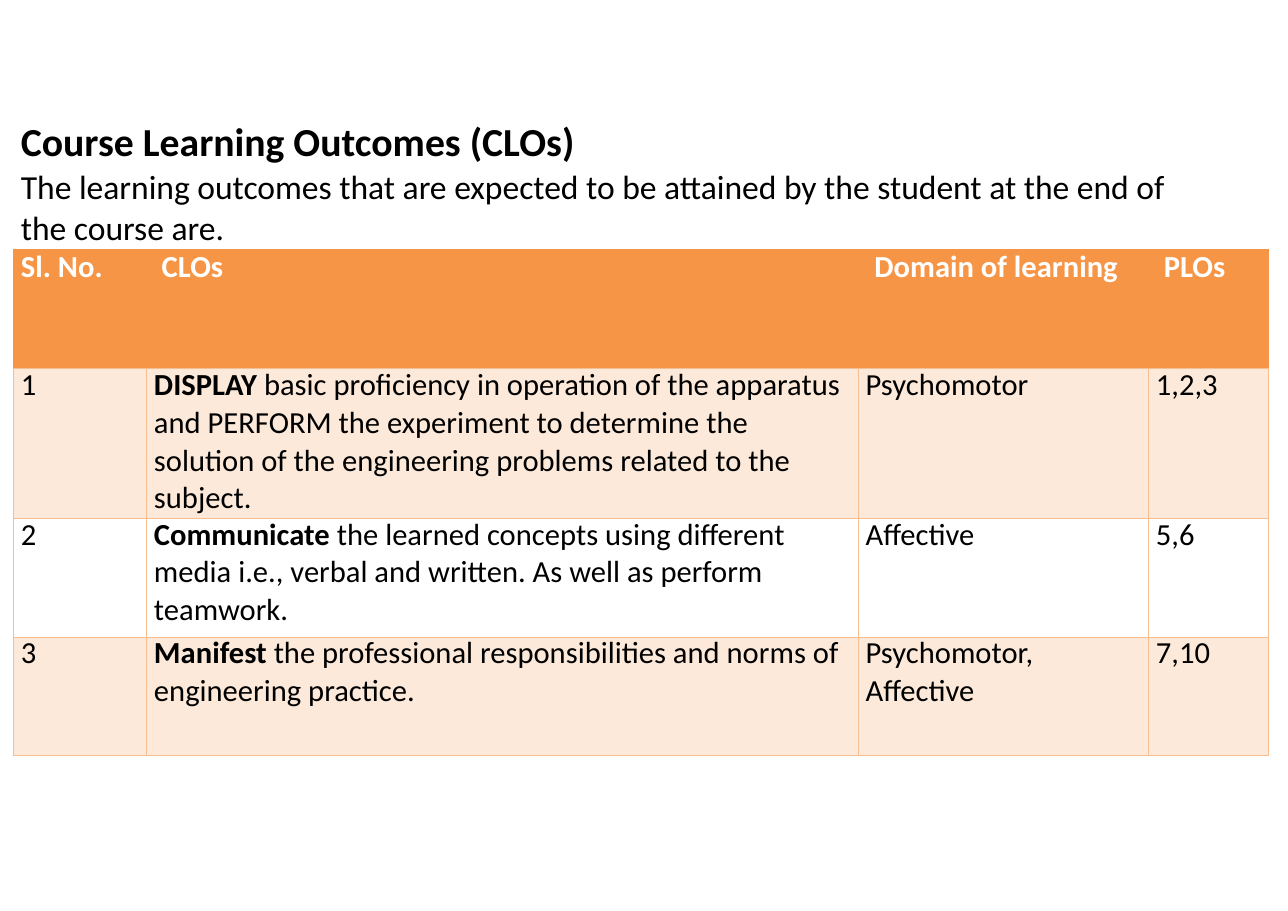
from dataclasses import dataclass

from lxml import etree
from pptx import Presentation
from pptx import util as u
from pptx.dml.color import RGBColor
from pptx.enum import text
from pptx.oxml import ns


@dataclass(frozen=True)
class Theme:
    """Colours, font and type sizes of the slide."""
    font: str = "Calibri"
    ink: str = "000000"
    white: str = "FFFFFF"
    header: str = "F79546"
    band: str = "FCE9D9"
    border: str = "F9BE8F"
    title_size: int = 26
    intro_size: int = 22
    table_size: int = 20


THEME = Theme()
INDENT = 0.07
COLUMN_WIDTHS = (1.21, 6.47, 2.64, 1.09)
ROW_HEIGHTS = (1.08, 1.36, 1.08, 1.08)
HEADER_TABS = (1.28, 7.76, 10.39)
HEADERS = ("Sl. No.", "CLOs", "Domain of learning", "PLOs")
OUTCOMES = (
    ("1", "DISPLAY ",
     ("basic proficiency in operation of the apparatus",
      "and PERFORM the experiment to determine the",
      "solution of the engineering problems related to the subject."),
     ("Psychomotor",), "1,2,3"),
    ("2", "Communicate ",
     ("the learned concepts using different",
      "media i.e., verbal and written. As well as perform teamwork."),
     ("Affective",), "5,6"),
    ("3", "Manifest ",
     ("the professional responsibilities and norms of",
      "engineering practice."),
     ("Psychomotor,", "Affective"), "7,10"),
)


def apply(target, values):
    """Set the attributes of an object from a dict."""
    for name, value in values.items():
        setattr(target, name, value)


def add_run(paragraph, wording, size, color=THEME.ink, bold=False):
    """Add a formatted run to a paragraph."""
    run = paragraph.add_run()
    run.text = wording
    apply(run.font, {"name": THEME.font, "size": u.Pt(size), "bold": bold})
    run.font.color.rgb = RGBColor.from_string(color)


def format_paragraph(paragraph, indent, before=0, line=None):
    """Set the indent and spacing of a paragraph."""
    apply(paragraph, {"alignment": text.PP_ALIGN.LEFT,
                      "space_before": u.Pt(before), "line_spacing": line})
    paragraph._p.get_or_add_pPr().set("marL", str(u.Inches(indent)))


def add_tabs(paragraph, positions):
    """Add left tab stops to a paragraph."""
    tabs = etree.SubElement(paragraph._p.get_or_add_pPr(), ns.qn("a:tabLst"))
    for position in positions:
        etree.SubElement(tabs, ns.qn("a:tab"), pos=str(u.Inches(position)), algn="l")


def style_cell(cell, fill, border):
    """Give a cell its borders, fill and zero margins."""
    properties = cell._tc.get_or_add_tcPr()
    for side in ("lnL", "lnR", "lnT", "lnB"):
        line = etree.SubElement(properties, ns.qn(f"a:{side}"), w=str(u.Pt(0.5)))
        solid = etree.SubElement(line, ns.qn("a:solidFill"))
        etree.SubElement(solid, ns.qn("a:srgbClr"), val=border)
    cell.fill.solid()
    cell.fill.fore_color.rgb = RGBColor.from_string(fill)
    apply(cell, {"margin_left": 0, "margin_right": 0, "margin_top": 0,
                 "margin_bottom": 0, "vertical_anchor": text.MSO_ANCHOR.TOP})


def fill_cell(cell, lines, lead=""):
    """Write paragraphs into a cell, the first with an optional bold lead."""
    for index, wording in enumerate(lines):
        frame = cell.text_frame
        paragraph = frame.add_paragraph() if index else frame.paragraphs[0]
        if index:
            format_paragraph(paragraph, INDENT, before=0.3)
        else:
            format_paragraph(paragraph, INDENT, line=u.Pt(23))
            if lead:
                add_run(paragraph, lead, THEME.table_size, bold=True)
        add_run(paragraph, wording, THEME.table_size)


def add_heading(slide):
    """Add the heading and its introduction."""
    box = slide.shapes.add_textbox(u.Inches(0.18), u.Inches(1.05),
                                   u.Inches(10.5), u.Inches(1.21))
    frame = box.text_frame
    apply(frame, {"word_wrap": True, "margin_left": 0, "margin_right": 0,
                  "margin_top": u.Inches(0.01), "margin_bottom": 0})
    heading = frame.paragraphs[0]
    format_paragraph(heading, 0.01, before=1)
    add_run(heading, "Course Learning Outcomes (CLOs)", THEME.title_size, bold=True)
    intro = frame.add_paragraph()
    format_paragraph(intro, 0.01, before=0.3, line=1.02)
    add_run(intro, "The learning outcomes that are expected to be attained by "
                   "the student at the end of the course are.", THEME.intro_size)


def add_header(table):
    """Merge the first row and place its labels at tab stops."""
    for cell in table.rows[0].cells:
        style_cell(cell, THEME.header, THEME.header)
    table.cell(0, 0).merge(table.cell(0, len(HEADERS) - 1))
    paragraph = table.cell(0, 0).text_frame.paragraphs[0]
    format_paragraph(paragraph, INDENT, line=u.Pt(23.4))
    add_tabs(paragraph, HEADER_TABS)
    add_run(paragraph, "\t".join(HEADERS), THEME.table_size, THEME.white, bold=True)


def add_outcomes_table(slide):
    """Add the table of course learning outcomes."""
    table = slide.shapes.add_table(
        len(ROW_HEIGHTS), len(COLUMN_WIDTHS), u.Inches(0.12), u.Inches(2.27),
        u.Inches(sum(COLUMN_WIDTHS)), u.Inches(sum(ROW_HEIGHTS))).table
    apply(table, {"first_row": False, "horz_banding": False})
    for column, width in zip(table.columns, COLUMN_WIDTHS):
        column.width = u.Inches(width)
    for row, height in zip(table.rows, ROW_HEIGHTS):
        row.height = u.Inches(height)
    add_header(table)
    for index, (number, lead, outcome, domains, plos) in enumerate(OUTCOMES, 1):
        cells = list(table.rows[index].cells)
        for cell in cells:
            style_cell(cell, THEME.band if index % 2 else THEME.white, THEME.border)
        fill_cell(cells[0], (number,))
        fill_cell(cells[1], outcome, lead)
        fill_cell(cells[2], domains)
        fill_cell(cells[3], (plos,))


def main():
    """Build and save the slide."""
    presentation = Presentation()
    apply(presentation, {"slide_width": u.Inches(11.71),
                         "slide_height": u.Inches(8.28)})
    slide = presentation.slides.add_slide(presentation.slide_layouts[6])
    add_heading(slide)
    add_outcomes_table(slide)
    presentation.save("out.pptx")


if __name__ == "__main__":
    main()
